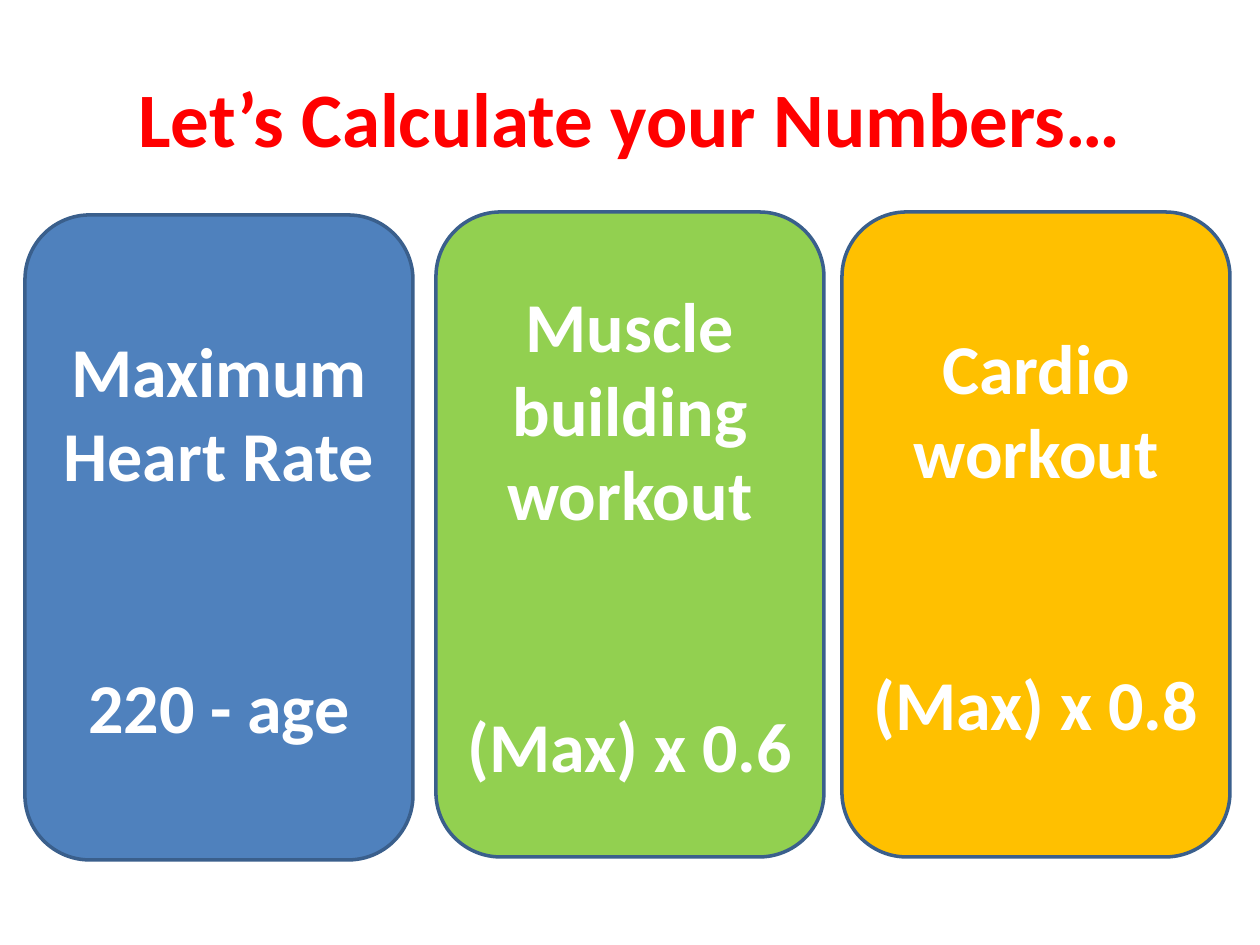
from pptx import Presentation
from pptx.dml.color import RGBColor
from pptx.enum.shapes import MSO_SHAPE
from pptx.enum.text import MSO_ANCHOR, PP_ALIGN
from pptx.util import Emu, Pt

PIXELS_PER_INCH = 126
CARD_WIDTH, CARD_HEIGHT = 388, 645
FORMULA_GAP = Pt(96)
TITLE_FORMAT = {"name": "Calibri", "size": Pt(44), "bold": True}
CARD_FORMAT = {"name": "Calibri", "size": Pt(40), "bold": True}
CARDS = [
    (25, 215, "4F81BD", ["Maximum Heart Rate"], "220 - age"),
    (436, 212, "92D050", ["Muscle building workout"], "(Max) x 0.6"),
    (842, 212, "FFC000", ["Cardio", "workout"], "(Max) x 0.8"),
]


def px(length):
    """Turn whole pixels into EMU."""
    return Emu(round(length * 914400 / PIXELS_PER_INCH))


def color(hex_value):
    """Turn a hex string into a colour."""
    return RGBColor.from_string(hex_value)


def write_paragraph(paragraph, text, font_format, hex_value):
    """Write one centred paragraph in the given format."""
    paragraph.text = text
    paragraph.alignment = PP_ALIGN.CENTER
    for name, value in font_format.items():
        setattr(paragraph.font, name, value)
    paragraph.font.color.rgb = color(hex_value)


def add_title(slide, text):
    """Place and fill the title placeholder."""
    title = slide.shapes.title
    bounds = {"left": 63, "top": 38, "width": 1134, "height": 158}
    for name, length in bounds.items():
        setattr(title, name, px(length))
    title.text_frame.vertical_anchor = MSO_ANCHOR.MIDDLE
    write_paragraph(title.text_frame.paragraphs[0], text, TITLE_FORMAT, "FF0000")


def add_card(slide, left, top, fill, heading, formula):
    """Add a rounded card with a heading above its formula."""
    card = slide.shapes.add_shape(
        MSO_SHAPE.ROUNDED_RECTANGLE,
        px(left), px(top), px(CARD_WIDTH), px(CARD_HEIGHT),
    )
    card.shadow.inherit = False
    card.fill.solid()
    card.fill.fore_color.rgb = color(fill)
    card.line.color.rgb = color("3A5F8C")
    card.line.width = Pt(2)
    frame = card.text_frame
    frame.word_wrap = True
    frame.vertical_anchor = MSO_ANCHOR.MIDDLE
    for index, text in enumerate([*heading, formula]):
        paragraph = frame.add_paragraph() if index else frame.paragraphs[0]
        write_paragraph(paragraph, text, CARD_FORMAT, "FFFFFF")
    frame.paragraphs[-1].space_before = FORMULA_GAP


def main():
    """Build and save the heart rate slide."""
    presentation = Presentation()
    presentation.slide_width = px(1260)
    presentation.slide_height = px(945)
    slide = presentation.slides.add_slide(presentation.slide_layouts[5])
    add_title(slide, "Let’s Calculate your Numbers…")
    for card in CARDS:
        add_card(slide, *card)
    presentation.save("out.pptx")


if __name__ == "__main__":
    main()
